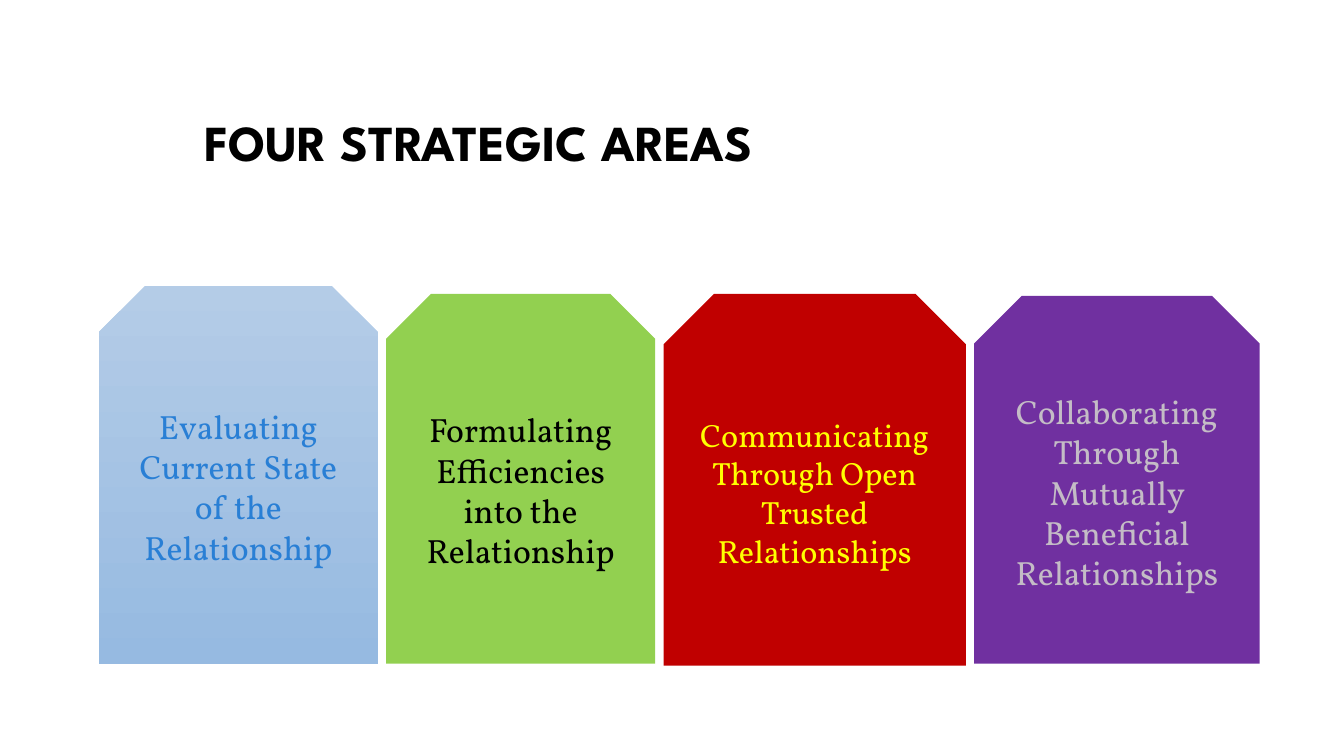
from dataclasses import dataclass

from pptx import Presentation
from pptx import util as u
from pptx.dml.color import RGBColor
from pptx.enum import shapes, text

Pt = u.Pt


@dataclass(frozen=True)
class Theme:
    head_font: str = "League Spartan"
    body_font: str = "Vollkorn"
    head_size: float = 36
    body_size: float = 24
    small_size: float = 23
    black: str = "000000"
    blue: str = "297FD5"
    pale: str = "B4CCE7"
    sky: str = "96BAE1"
    green: str = "92D050"
    red: str = "C00000"
    yellow: str = "FFFF00"
    purple: str = "7030A0"
    grey: str = "C4BCC6"


@dataclass(frozen=True)
class Card:
    label: str
    box: tuple[float, float, float, float]
    fills: tuple[str, ...]  # two colours make a gradient, top to bottom
    ink: str
    size: float


THEME = Theme()
CARDS = [
    Card("Evaluating Current State of the Relationship",
         (70.6, 204, 199.4, 270), (THEME.pale, THEME.sky), THEME.blue, THEME.body_size),
    Card("Formulating Efficiencies into the Relationship",
         (275.8, 210, 192.2, 264), (THEME.green,), THEME.black, THEME.body_size),
    Card("Communicating Through Open Trusted Relationships",
         (474, 210, 216, 265.5), (THEME.red,), THEME.yellow, THEME.small_size),
    Card("Collaborating Through Mutually Beneficial Relationships",
         (695.8, 211.4, 204, 262.6), (THEME.purple,), THEME.grey, THEME.body_size),
]


def write(frame, words: str, font: str, size: float, ink: str, bold: bool = False) -> None:
    """Set one centred paragraph and format its run."""
    frame.text = words
    frame.word_wrap = True
    line = frame.paragraphs[0]
    line.alignment = text.PP_ALIGN.CENTER
    style = line.runs[0].font
    style.name, style.size, style.bold = font, Pt(size), bold
    style.color.rgb = RGBColor.from_string(ink)


def draw_title(slide) -> None:
    title = slide.shapes.title
    title.left, title.top, title.width, title.height = map(Pt, (0, 42, 684, 84))
    frame = title.text_frame
    write(frame, "FOUR STRATEGIC AREAS", THEME.head_font, THEME.head_size, THEME.black, True)
    frame.auto_size = text.MSO_AUTO_SIZE.NONE
    frame.vertical_anchor = text.MSO_ANCHOR.BOTTOM
    frame.paragraphs[0].line_spacing = 0.8


def draw_card(slide, card: Card) -> None:
    tag = slide.shapes.add_shape(
        shapes.MSO_SHAPE.SNIP_2_SAME_RECTANGLE, *map(Pt, card.box))
    tag.shadow.inherit = False
    tag.line.fill.background()
    if len(card.fills) > 1:
        tag.fill.gradient()
        tag.fill.gradient_angle = 270
        for stop, shade in zip(tag.fill.gradient_stops, card.fills):
            stop.color.rgb = RGBColor.from_string(shade)
    else:
        tag.fill.solid()
        tag.fill.fore_color.rgb = RGBColor.from_string(card.fills[0])
    write(tag.text_frame, card.label, THEME.body_font, card.size, card.ink)
    tag.text_frame.vertical_anchor = text.MSO_ANCHOR.MIDDLE


def main() -> None:
    deck = Presentation()
    deck.slide_width, deck.slide_height = Pt(960), Pt(540)
    slide = deck.slides.add_slide(deck.slide_layouts[5])  # title only
    draw_title(slide)
    for card in CARDS:
        draw_card(slide, card)
    deck.save("out.pptx")


if __name__ == "__main__":
    main()
